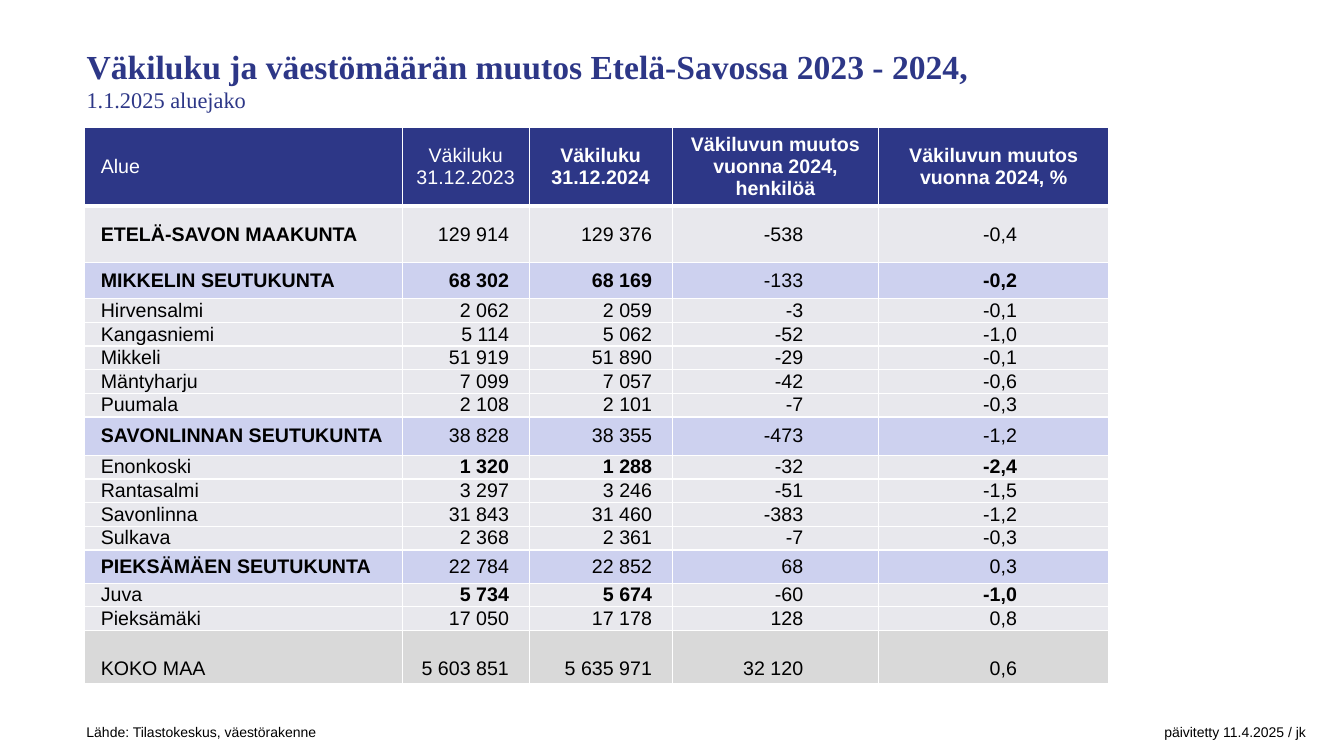
"""Build the South Savo population table slide."""
from typing import NamedTuple

from lxml import etree
from pptx import Presentation
from pptx.dml.color import RGBColor
from pptx.enum.text import MSO_ANCHOR, PP_ALIGN
from pptx.oxml.ns import qn
from pptx.util import Pt

LEFT, CENTER, RIGHT = PP_ALIGN.LEFT, PP_ALIGN.CENTER, PP_ALIGN.RIGHT
TOP, MIDDLE, BOTTOM = MSO_ANCHOR.TOP, MSO_ANCHOR.MIDDLE, MSO_ANCHOR.BOTTOM
COLORS = {
    "navy": "2D3787",
    "white": "FFFFFF",
    "black": "000000",
    "plain": "E8E8ED",
    "subregion": "CDD1EF",
    "country": "D9D9D9",
}
MUNICIPALITY_HEIGHT = 16.9
HEADER_HEIGHT = 56.5
LABEL_INSET = 11.5
HEADER_INSET = 3
RULE, HEADER_RULE = 1, 3


class Column(NamedTuple):
    heading: str
    width: float
    right_inset: float
    bold: bool


class Area(NamedTuple):
    values: tuple[str, ...]
    bold: tuple[int, ...] = ()
    height: float = MUNICIPALITY_HEIGHT
    fill: str = "plain"


COLUMNS = [
    Column("Alue", 226.8, 0, False),
    Column("Väkiluku 31.12.2023", 90.7, 14.4, False),
    Column("Väkiluku 31.12.2024", 102.2, 14.4, True),
    Column("Väkiluvun muutos vuonna 2024, henkilöä", 147.6, 54, True),
    Column("Väkiluvun muutos vuonna 2024, %", 164.2, 65.5, True),
]
AREAS = [
    Area(("ETELÄ-SAVON MAAKUNTA", "129 914", "129 376", "-538", "-0,4"), (0,), 40.3),
    Area(("MIKKELIN SEUTUKUNTA", "68 302", "68 169", "-133", "-0,2"), (0, 1, 2, 4), 25.9, "subregion"),
    Area(("Hirvensalmi", "2 062", "2 059", "-3", "-0,1")),
    Area(("Kangasniemi", "5 114", "5 062", "-52", "-1,0")),
    Area(("Mikkeli", "51 919", "51 890", "-29", "-0,1")),
    Area(("Mäntyharju", "7 099", "7 057", "-42", "-0,6")),
    Area(("Puumala", "2 108", "2 101", "-7", "-0,3")),
    Area(("SAVONLINNAN SEUTUKUNTA", "38 828", "38 355", "-473", "-1,2"), (0,), 27.4, "subregion"),
    Area(("Enonkoski", "1 320", "1 288", "-32", "-2,4"), (1, 2, 4)),
    Area(("Rantasalmi", "3 297", "3 246", "-51", "-1,5")),
    Area(("Savonlinna", "31 843", "31 460", "-383", "-1,2")),
    Area(("Sulkava", "2 368", "2 361", "-7", "-0,3")),
    Area(("PIEKSÄMÄEN SEUTUKUNTA", "22 784", "22 852", "68", "0,3"), (0,), 23.8, "subregion"),
    Area(("Juva", "5 734", "5 674", "-60", "-1,0"), (1, 2, 4)),
    Area(("Pieksämäki", "17 050", "17 178", "128", "0,8")),
    Area(("KOKO MAA", "5 603 851", "5 635 971", "32 120", "0,6"), (), 38.2, "country"),
]


def write(paragraph, text: str, *, size: float, color: str = "black",
          font: str = "Arial", bold: bool = False, align=LEFT) -> None:
    """Add one formatted run to a paragraph."""
    paragraph.alignment = align
    run = paragraph.add_run()
    run.text = text
    run.font.name = font
    run.font.size = Pt(size)
    run.font.bold = bold
    run.font.color.rgb = RGBColor.from_string(COLORS[color])


def add_frame(slide, left: float, top: float, width: float, height: float, anchor):
    """Add a wrapping text box and return its text frame."""
    box = slide.shapes.add_textbox(Pt(left), Pt(top), Pt(width), Pt(height))
    box.text_frame.word_wrap = True
    box.text_frame.vertical_anchor = anchor
    return box.text_frame


def style_cell(cell, fill: str, insets: tuple[float, ...], anchor,
               top_rule: float, bottom_rule: float) -> None:
    """Set a cell's borders, fill, insets and anchor."""
    properties = cell._tc.get_or_add_tcPr()
    rules = {"a:lnL": RULE, "a:lnR": RULE, "a:lnT": top_rule, "a:lnB": bottom_rule}
    for tag, width in rules.items():
        line = etree.SubElement(properties, qn(tag), w=str(Pt(width)))
        solid = etree.SubElement(line, qn("a:solidFill"))
        etree.SubElement(solid, qn("a:srgbClr"), val=COLORS["white"])
    cell.fill.solid()
    cell.fill.fore_color.rgb = RGBColor.from_string(COLORS[fill])
    cell.margin_left, cell.margin_top, cell.margin_right, cell.margin_bottom = map(Pt, insets)
    cell.vertical_anchor = anchor


def add_title(slide) -> None:
    """Add the heading and its subtitle."""
    title = add_frame(slide, 54.7, 24.5, 890, 64, MIDDLE)
    write(title.paragraphs[0], "Väkiluku ja väestömäärän muutos Etelä-Savossa 2023 - 2024,",
          size=24, color="navy", font="Times New Roman", bold=True)
    write(title.add_paragraph(), "1.1.2025 aluejako",
          size=16, color="navy", font="Times New Roman")


def add_population_table(slide) -> None:
    """Add the table of areas and population changes."""
    heights = [HEADER_HEIGHT] + [area.height for area in AREAS]
    total_width = sum(column.width for column in COLUMNS)
    table = slide.shapes.add_table(len(heights), len(COLUMNS), Pt(60.5), Pt(90.7),
                                   Pt(total_width), Pt(sum(heights))).table
    table.first_row = False
    table.horz_banding = False
    for row, height in zip(table.rows, heights):
        row.height = Pt(height)
    for index, column in enumerate(COLUMNS):
        table.columns[index].width = Pt(column.width)
        is_label = index == 0
        heading = table.cell(0, index)
        heading_left = LABEL_INSET if is_label else HEADER_INSET
        style_cell(heading, "navy", (heading_left, HEADER_INSET, HEADER_INSET, HEADER_INSET),
                   MIDDLE, RULE, HEADER_RULE)
        write(heading.text_frame.paragraphs[0], column.heading, size=14, color="white",
              bold=column.bold, align=LEFT if is_label else CENTER)
        for number, area in enumerate(AREAS, start=1):
            cell = table.cell(number, index)
            is_country = area.fill == "country"
            insets = (LABEL_INSET if is_label else 0, 0, column.right_inset, 3 if is_country else 0)
            style_cell(cell, area.fill, insets, BOTTOM if is_country else MIDDLE,
                       HEADER_RULE if number == 1 else RULE, RULE)
            write(cell.text_frame.paragraphs[0], area.values[index], size=14,
                  bold=index in area.bold, align=LEFT if is_label else RIGHT)


def add_footer(slide) -> None:
    """Add the source and update date, set apart by a right tab."""
    footer = add_frame(slide, 54.7, 513.4, 895.7, 19.4, TOP).paragraphs[0]
    stops = etree.SubElement(footer._p.get_or_add_pPr(), qn("a:tabLst"))
    etree.SubElement(stops, qn("a:tab"), pos=str(Pt(871)), algn="r")
    write(footer, "Lähde: Tilastokeskus, väestörakenne\tpäivitetty 11.4.2025 / jk", size=10)


def main() -> None:
    """Build and save the slide."""
    deck = Presentation()
    deck.slide_width, deck.slide_height = Pt(960), Pt(540)
    slide = deck.slides.add_slide(deck.slide_layouts[6])
    add_title(slide)
    add_population_table(slide)
    add_footer(slide)
    deck.save("out.pptx")


if __name__ == "__main__":
    main()
